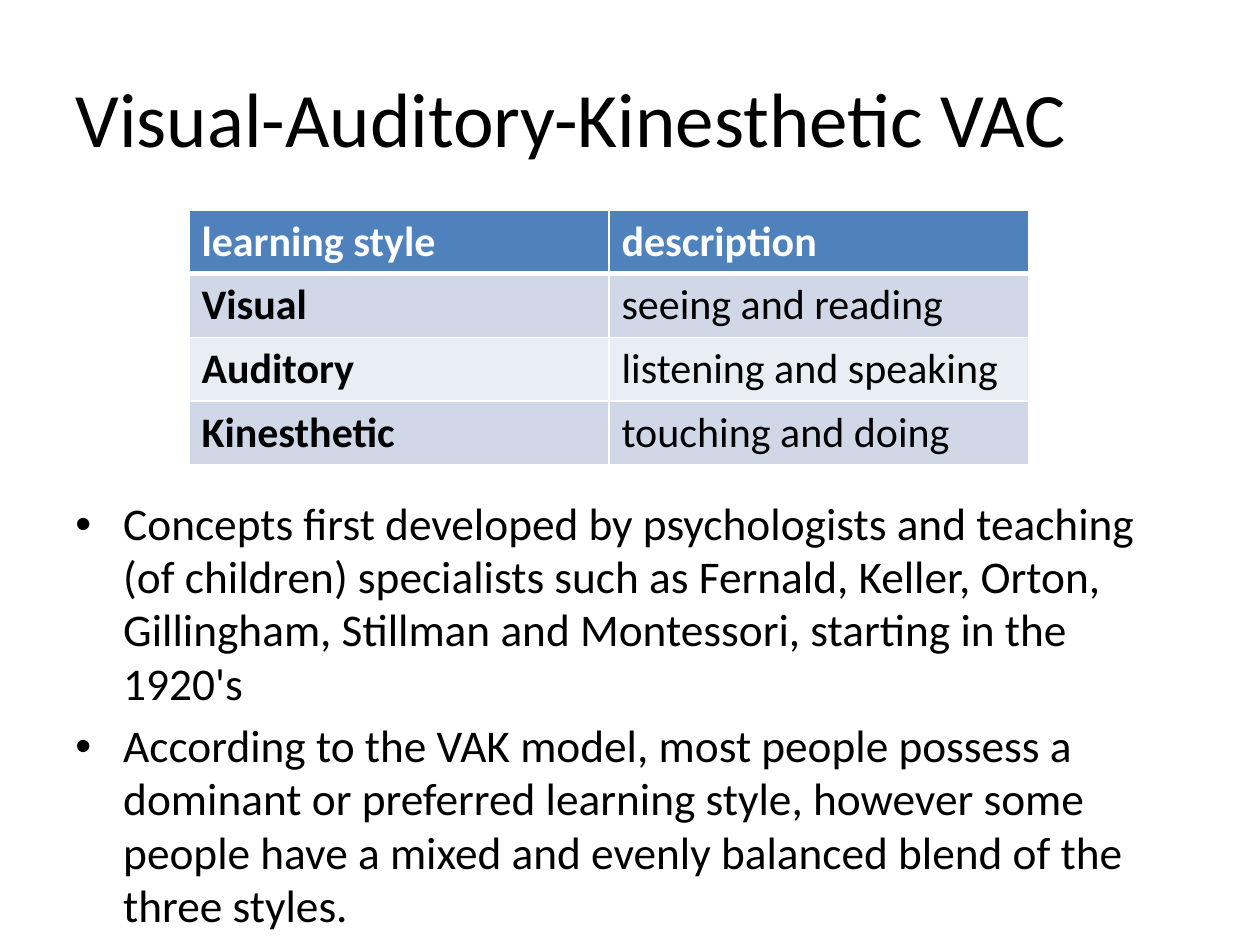
from dataclasses import dataclass
from pptx import Presentation as Deck
from pptx.dml.color import RGBColor as Color
from pptx.enum.text import MSO_ANCHOR as Anchor
from pptx.oxml.ns import qn
from pptx.util import Inches, Pt
from lxml.etree import SubElement as Sub


@dataclass(frozen=True)
class Theme:
    font: str = "Calibri"
    ink: str = "000000"
    white: str = "FFFFFF"
    head: str = "4F81BD"
    bands: tuple = ("D0D8E8", "E9EDF4")
    title: float = 44
    body: float = 25.9
    cell: float = 24


class Page:
    def __init__(self, deck, theme):
        self.deck = deck
        self.theme = theme
        self.slide = deck.slides.add_slide(deck.slide_layouts[6])

    def area(self, x, y, w, h):
        wide, high = self.deck.slide_width, self.deck.slide_height
        return [int(v) for v in (x * wide, y * high, w * wide, h * high)]

    def text(self, para, words, size, ink, bold=False):
        run = para.add_run()
        run.text = words
        font = run.font
        font.name, font.size, font.bold = self.theme.font, Pt(size), bold
        font.color.rgb = Color.from_string(ink)

    def box(self, area, anchor):
        frame = self.slide.shapes.add_textbox(*self.area(*area)).text_frame
        frame.word_wrap = True
        frame.vertical_anchor = anchor
        return frame

    def title(self, words, area):
        para = self.box(area, Anchor.MIDDLE).paragraphs[0]
        self.text(para, words, self.theme.title, self.theme.ink)

    def bullets(self, items, area):
        frame = self.box(area, Anchor.TOP)
        size = self.theme.body
        for i, words in enumerate(items):
            para = frame.add_paragraph() if i else frame.paragraphs[0]
            para.line_spacing = 0.98
            para.space_before = Pt(0.2 * size if i else 0)
            props = para._p.get_or_add_pPr()
            indent = Inches(0.38)
            props.set("marL", str(indent))
            props.set("indent", str(-indent))
            Sub(props, qn("a:buFont"), typeface="Arial")
            Sub(props, qn("a:buChar"), char="•")
            self.text(para, words, size, self.theme.ink)

    def border(self, cell, low):
        props = cell._tc.get_or_add_tcPr()
        for i, side in enumerate("LRTB"):
            width = Pt(low if side == "B" else 1)
            line = props.makeelement(qn(f"a:ln{side}"), {"w": str(width)})
            fill = Sub(line, qn("a:solidFill"))
            Sub(fill, qn("a:srgbClr"), val=self.theme.white)
            props.insert(i, line)

    def table(self, rows, area):
        look = self.theme
        shape = self.slide.shapes.add_table(len(rows), len(rows[0]), *self.area(*area))
        for r, row in enumerate(rows):
            back = look.bands[(r - 1) % 2] if r else look.head
            ink = look.ink if r else look.white
            for c, words in enumerate(row):
                cell = shape.table.cell(r, c)
                cell.vertical_anchor = Anchor.MIDDLE
                cell.fill.solid()
                cell.fill.fore_color.rgb = Color.from_string(back)
                self.border(cell, 1 if r else 3)
                para = cell.text_frame.paragraphs[0]
                self.text(para, words, look.cell, ink, r == 0 or c == 0)


def main():
    deck = Deck()
    deck.slide_width, deck.slide_height = Inches(10), Inches(7.5)
    page = Page(deck, Theme())
    page.title("Visual-Auditory-Kinesthetic VAC", (0.05, 0.04, 0.9, 1 / 6))
    page.bullets([
        "Concepts first developed by psychologists and teaching (of children) "
        "specialists such as Fernald, Keller, Orton, Gillingham, Stillman and "
        "Montessori, starting in the 1920's",
        "According to the VAK model, most people possess a dominant or preferred "
        "learning style, however some people have a mixed and evenly balanced "
        "blend of the three styles.",
    ], (0.05, 0.52, 0.9, 0.4))
    page.table([
        ("learning style", "description"),
        ("Visual", "seeing and reading"),
        ("Auditory", "listening and speaking"),
        ("Kinesthetic", "touching and doing"),
    ], (0.15, 2 / 9, 2 / 3, 0.27))
    deck.save("out.pptx")


if __name__ == "__main__":
    main()
